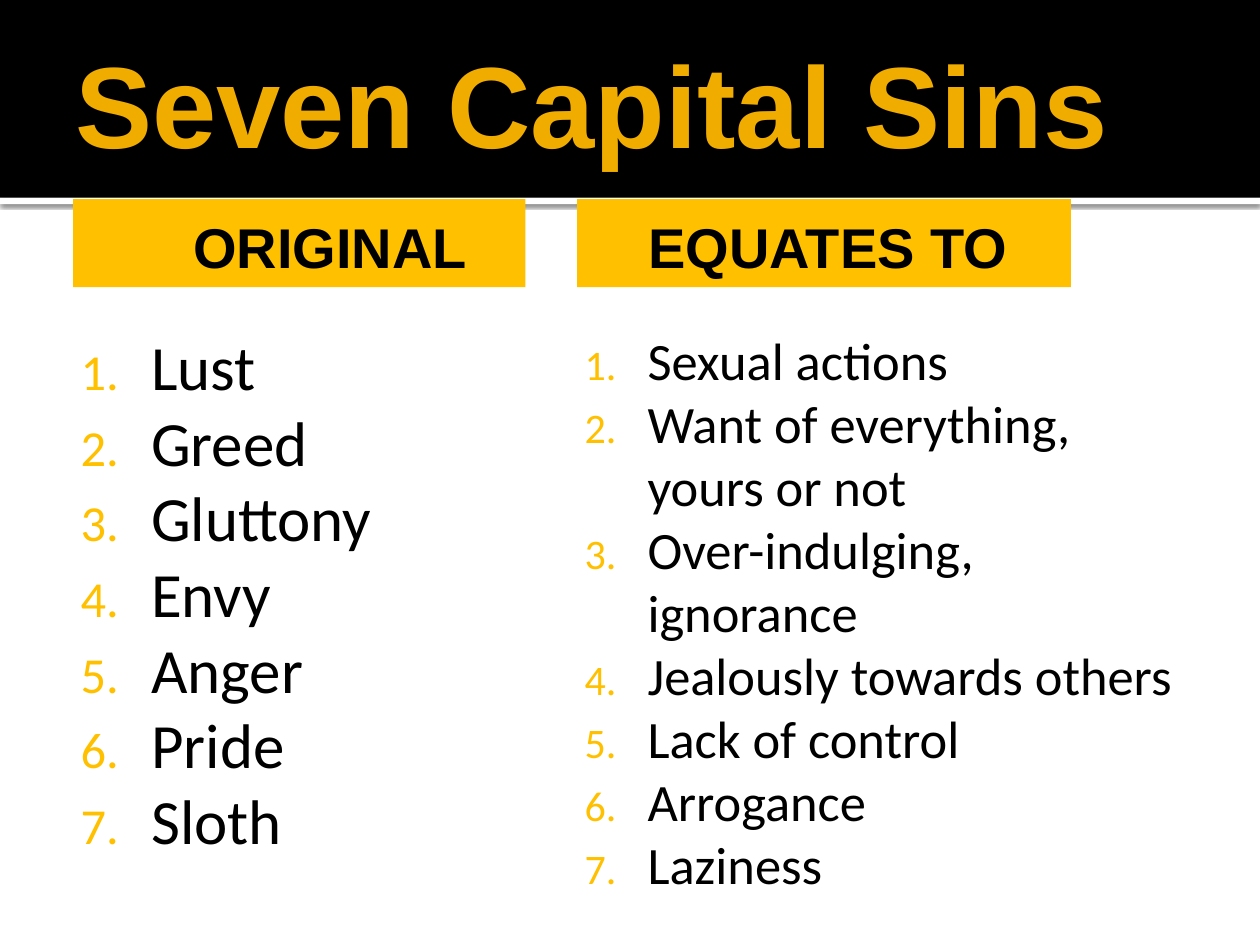
from lxml import etree
from pptx import Presentation
from pptx.dml.color import RGBColor
from pptx.enum.shapes import MSO_SHAPE
from pptx.enum.text import MSO_ANCHOR, PP_ALIGN
from pptx.oxml import parse_xml
from pptx.oxml.ns import nsdecls
from pptx.util import Inches, Pt

COLORS = {"black": "000000", "white": "FFFFFF", "title": "F0AD00", "gold": "FFC000"}

COLUMNS = [
    {"heading": "ORIGINAL", "left": 0.58, "heading_width": 3.59, "heading_inset": 0.59,
     "list_width": 3.42, "list_height": 4.32, "size": 36, "indent": 0.56,
     "items": ["Lust", "Greed", "Gluttony", "Envy", "Anger", "Pride", "Sloth"]},
    {"heading": "EQUATES TO", "left": 4.58, "heading_width": 3.92, "heading_inset": 0.16,
     "list_width": 5, "list_height": 4.75, "size": 30, "indent": 0.5,
     "items": ["Sexual actions", "Want of everything, yours or not",
               "Over-indulging, ignorance", "Jealously towards others",
               "Lack of control", "Arrogance", "Laziness"]},
]

presentation = Presentation()
presentation.slide_width = Inches(10)
presentation.slide_height = Inches(7.5)
slide = presentation.slides.add_slide(presentation.slide_layouts[6])


def add_bar(left, top, width, height, color):
    shape = slide.shapes.add_shape(MSO_SHAPE.RECTANGLE, Inches(left), Inches(top),
                                   Inches(width), Inches(height))
    shape.fill.solid()
    shape.fill.fore_color.rgb = RGBColor.from_string(COLORS[color])
    shape.line.fill.background()
    shape.shadow.inherit = False
    return shape


def write_text(paragraph, text, font, size, color, bold=False):
    run = paragraph.add_run()
    run.text = text
    run.font.name = font
    run.font.size = Pt(size)
    run.font.bold = bold
    run.font.color.rgb = RGBColor.from_string(COLORS[color])


# Title band with a shadowed white strip below it
strip = add_bar(0, 1.57, 10, 0.05, "white")
effects = strip._element.spPr.find("{*}effectLst")
effects.append(parse_xml(
    f'<a:outerShdw {nsdecls("a")} blurRad="{Pt(2.5)}" dist="{Pt(0.8)}" dir="5400000">'
    f'<a:srgbClr val="{COLORS["black"]}"><a:alpha val="60000"/></a:srgbClr></a:outerShdw>'))
add_bar(0, 0, 10, 1.57, "black")

title = slide.shapes.add_textbox(Inches(0.5), Inches(0.3), Inches(9), Inches(1.03))
frame = title.text_frame
frame.word_wrap = True
frame.vertical_anchor = MSO_ANCHOR.MIDDLE
frame.margin_right = Inches(0.05)
write_text(frame.paragraphs[0], "Seven Capital Sins", "Arial", 66, "title", bold=True)

for column in COLUMNS:
    heading = add_bar(column["left"], 1.58, column["heading_width"], 0.7, "gold")
    frame = heading.text_frame
    frame.vertical_anchor = MSO_ANCHOR.MIDDLE
    frame.margin_left = Inches(column["heading_inset"])
    frame.margin_top = Inches(0.1)
    paragraph = frame.paragraphs[0]
    paragraph.alignment = PP_ALIGN.CENTER
    write_text(paragraph, column["heading"], "Arial", 32, "black", bold=True)

    numbered_list = slide.shapes.add_textbox(
        Inches(column["left"]), Inches(2.5),
        Inches(column["list_width"]), Inches(column["list_height"]))
    frame = numbered_list.text_frame
    frame.word_wrap = True
    frame.margin_left = Inches(0.06)
    frame.margin_top = Inches(0.1)
    for index, item in enumerate(column["items"]):
        paragraph = frame.paragraphs[0] if index == 0 else frame.add_paragraph()
        write_text(paragraph, item, "Calibri", column["size"], "black")
        properties = paragraph._p.get_or_add_pPr()
        indent = Inches(column["indent"])
        properties.set("marL", str(indent))
        properties.set("indent", str(-indent))
        bullet_color = etree.SubElement(properties, properties.tag.replace("pPr", "buClr"))
        bullet_color.append(parse_xml(f'<a:srgbClr {nsdecls("a")} val="{COLORS["gold"]}"/>'))
        properties.append(parse_xml(f'<a:buSzPct {nsdecls("a")} val="80000"/>'))
        properties.append(parse_xml(f'<a:buAutoNum {nsdecls("a")} type="arabicPeriod"/>'))

presentation.save("out.pptx")
